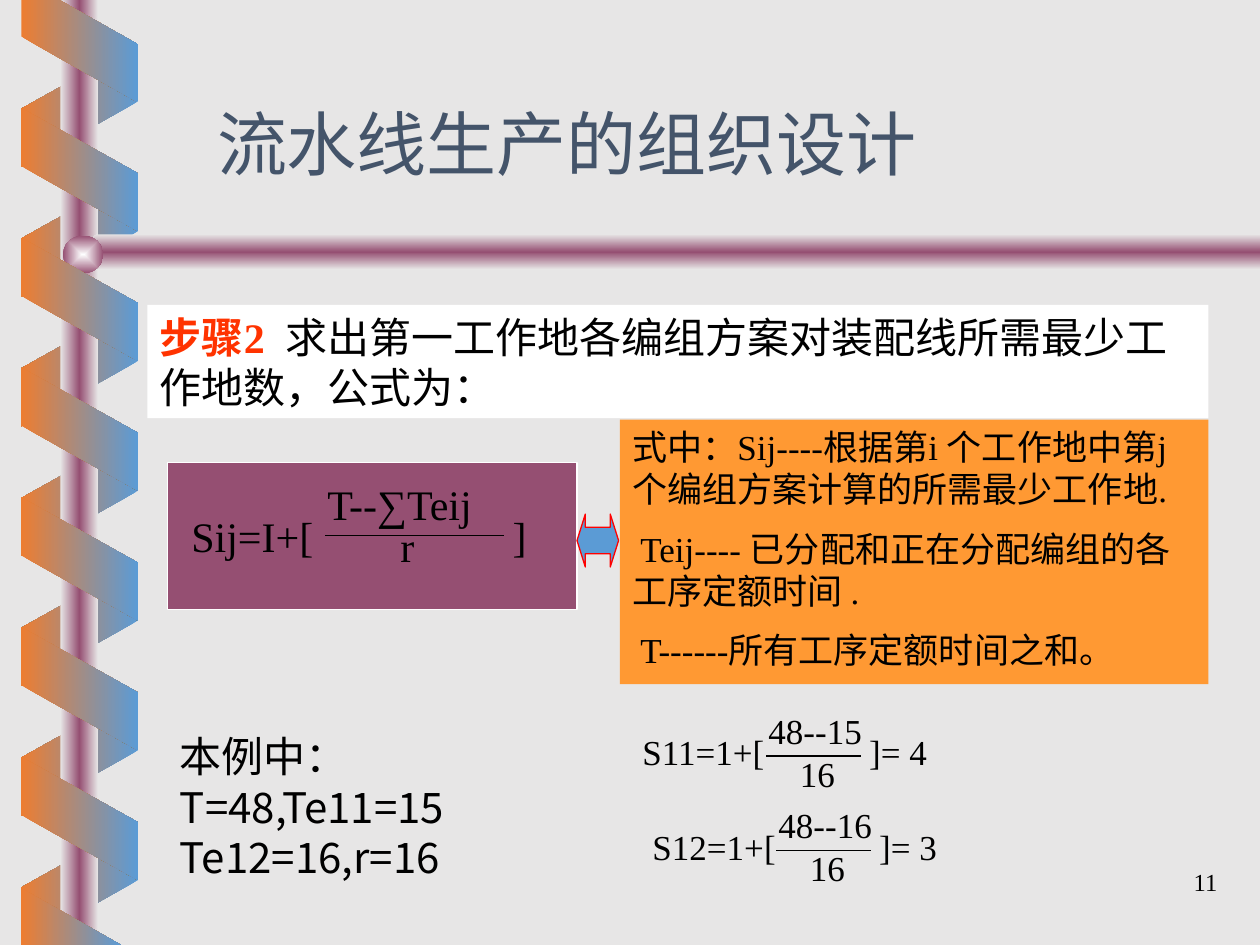
from lxml import etree
from pptx import Presentation
from pptx.dml.color import RGBColor
from pptx.enum.shapes import MSO_CONNECTOR, MSO_SHAPE
from pptx.enum.text import MSO_ANCHOR, PP_ALIGN
from pptx.oxml import parse_xml
from pptx.oxml.ns import nsdecls, qn
from pptx.util import Inches, Pt

RECT, OVAL = MSO_SHAPE.RECTANGLE, MSO_SHAPE.OVAL
STRIP, BAR = MSO_SHAPE.PARALLELOGRAM, MSO_SHAPE.PENTAGON
ARROW = MSO_SHAPE.LEFT_RIGHT_ARROW
STRAIGHT = MSO_CONNECTOR.STRAIGHT
TOP, BOTTOM = MSO_ANCHOR.TOP, MSO_ANCHOR.BOTTOM
LEFT, RIGHT = PP_ALIGN.LEFT, PP_ALIGN.RIGHT

SERIF, SANS = "Times New Roman", "Noto Sans CJK SC"
GRAY, PLUM, ORANGE, BLUE = "E7E6E6", "954F72", "ED7D31", "5B9BD5"
BLACK, WHITE, RED = "000000", "FFFFFF", "FF3300"
FADE = [(0, GRAY), (50, PLUM), (100, GRAY)]
RIBBON = [(0, ORANGE), (100, BLUE)]
STRIP_STEP = 1.03


def rgb(value):
    return RGBColor.from_string(value)


def fill_gradient(sp, stops, angle=None):
    """Fill with a linear gradient, or one from the centre if angle is None."""
    gs = "".join(f'<a:gs pos="{pos * 1000}"><a:srgbClr val="{color}"/></a:gs>'
                 for pos, color in stops)
    if angle is None:
        way = ('<a:path path="shape"><a:fillToRect l="50000" t="50000" '
               'r="50000" b="50000"/></a:path>')
    else:
        way = f'<a:lin ang="{angle * 60000}" scaled="0"/>'
    grad = parse_xml(f'<a:gradFill {nsdecls("a")} rotWithShape="0">'
                     f'<a:gsLst>{gs}</a:gsLst>{way}</a:gradFill>')
    geometry = sp._element.spPr.find(qn("a:prstGeom"))
    if geometry is None:
        geometry = sp._element.spPr.find(qn("a:custGeom"))
    geometry.addnext(grad)


def set_line(sp, color):
    if color:
        sp.line.color.rgb = rgb(color)
        sp.line.width = Pt(0.75)
    else:
        sp.line.fill.background()


def add_block(slide, kind, box, fill=None, line=None, adjust=(), flip=False):
    sp = slide.shapes.add_shape(kind, *map(Inches, box))
    sp.shadow.inherit = False
    for i, value in enumerate(adjust):
        sp.adjustments[i] = value
    if fill:
        sp.fill.solid()
        sp.fill.fore_color.rgb = rgb(fill)
    set_line(sp, line)
    if flip:
        sp._element.spPr.find(qn("a:xfrm")).set("flipH", "1")
    return sp


def add_strip(slide, top, rotation, stops, flip=False):
    sp = add_block(slide, STRIP, (0.14, top, 0.98, 0.93), adjust=[0.56], flip=flip)
    sp.rotation = rotation
    fill_gradient(sp, stops, 0)


def add_ribbon_end(slide, points):
    points = [(Inches(x), Inches(y)) for x, y in points]
    builder = slide.shapes.build_freeform(*points[0])
    builder.add_line_segments(points[1:], close=True)
    sp = builder.convert_to_shape()
    sp.shadow.inherit = False
    set_line(sp, None)
    fill_gradient(sp, RIBBON, 0)


def add_run(p, text, size, color=BLACK, font=SERIF, bold=False):
    r = p.add_run()
    r.text = text
    r.font.size = Pt(size)
    r.font.name = font
    r.font.bold = bold
    r.font.color.rgb = rgb(color)
    ea = etree.SubElement(r._r.get_or_add_rPr(), qn("a:ea"))
    ea.set("typeface", SANS)


def write(sp, paragraphs, size, align=LEFT, anchor=TOP, font=SERIF):
    """Fill a shape with paragraphs, each a list of (text, color, bold) runs."""
    tf = sp.text_frame
    tf.word_wrap = True
    tf.vertical_anchor = anchor
    for i, runs in enumerate(paragraphs):
        p = tf.add_paragraph() if i else tf.paragraphs[0]
        p.alignment = align
        if i:
            p.space_before = Pt(size / 2)
        for text, color, bold in runs:
            add_run(p, text, size, color, font, bold)


def add_text(slide, box, text, size, color=BLACK, **layout):
    sp = slide.shapes.add_textbox(*map(Inches, box))
    write(sp, [[(text, color, False)]], size, **layout)
    return sp


def add_rule(slide, x1, x2, y):
    line = slide.shapes.add_connector(
        STRAIGHT, Inches(x1), Inches(y), Inches(x2), Inches(y))
    set_line(line, BLACK)
    etree.SubElement(line._element.spPr, qn("a:effectLst"))


def add_gapped_text(slide, box, before, after, gap_end, size):
    """Write two parts of a formula, the second at a tab stop."""
    sp = add_text(slide, box, f"{before}\t{after}", size)
    pPr = sp.text_frame.paragraphs[0]._p.get_or_add_pPr()
    tab = etree.SubElement(etree.SubElement(pPr, qn("a:tabLst")), qn("a:tab"))
    tab.set("pos", str(Inches(gap_end)))
    tab.set("algn", "l")


def add_example(slide, x, y, name, numerator, result):
    add_rule(slide, x + 1.08, x + 1.83, y + 0.25)
    add_gapped_text(slide, (x, y, 3.17, 0.43), f"{name}=1+[", f"]= {result}", 1.8, 20)
    add_text(slide, (x + 1, y - 0.17, 1.58, 0.43), numerator, 20)
    add_text(slide, (x + 1.25, y + 0.17, 1, 0.43), "16", 20)


def add_decoration(slide):
    for i in range(7):
        add_strip(slide, 0.37 + i * STRIP_STEP, 90, [(0, BLUE), (100, ORANGE)], True)
    pole = add_block(slide, RECT, (0.48, 0, 0.3, 7.5))
    fill_gradient(pole, FADE, 0)
    bar = add_block(slide, BAR, (0.6, 1.86, 9.4, 0.28), adjust=[0.59], flip=True)
    fill_gradient(bar, FADE, 90)
    knob = add_block(slide, OVAL, (0.5, 1.87, 0.32, 0.3))
    fill_gradient(knob, [(0, "FEFFFF"), (100, PLUM)])
    for i in range(6):
        add_strip(slide, 0.88 + i * STRIP_STEP, 270, RIBBON)
    add_ribbon_end(slide, [(0.17, 0), (0.17, 0.29), (1.09, 0.81), (1.09, 0.35), (0.47, 0)])
    add_ribbon_end(slide, [(0.96, 7.5), (0.17, 7.05), (0.17, 7.5)])


def add_formula(slide):
    add_block(slide, RECT, (1.33, 3.67, 3.25, 1.17), PLUM, WHITE)
    add_gapped_text(slide, (1.42, 4, 3.5, 0.5), "Sij=I+[", "]", 2.55, 24)
    add_rule(slide, 2.58, 4, 4.25)
    add_text(slide, (2.5, 3.75, 2.33, 0.5), "T--∑Teij", 24)
    add_text(slide, (3.08, 4.08, 0.92, 0.5), "r", 24)


def main():
    prs = Presentation()
    prs.slide_width, prs.slide_height = Inches(10), Inches(7.5)
    slide = prs.slides.add_slide(prs.slide_layouts[6])
    slide.background.fill.solid()
    slide.background.fill.fore_color.rgb = rgb(GRAY)

    add_decoration(slide)
    add_text(slide, (1.5, 0.74, 7.92, 0.77), " 流水线生产的组织设计", 40, "44546A",
             anchor=BOTTOM, font=SANS)
    add_text(slide, (7.68, 6.83, 2.08, 0.5), "11", 14, align=RIGHT)

    step = add_block(slide, RECT, (1.17, 2.42, 8.42, 0.9), WHITE)
    write(step, [[("步骤2  ", RED, True),
                  ("求出第一工作地各编组方案对装配线所需最少工作地数，公式为：", BLACK, False)]], 24)

    add_formula(slide)
    legend = add_block(slide, RECT, (4.92, 3.33, 4.67, 2.1), "FF9933")
    terms = ["式中：Sij----根据第i 个工作地中第j 个编组方案计算的所需最少工作地.",
             " Teij---- 已分配和正在分配编组的各工序定额时间 .",
             " T------所有工序定额时间之和。"]
    write(legend, [[(term, BLACK, False)] for term in terms], 20)
    add_block(slide, ARROW, (4.58, 4.08, 0.33, 0.42), BLUE, "FF0000", [0.5, 0.2])

    add_text(slide, (1.33, 5.75, 2.83, 1.3), "本例中：T=48,Te11=15 Te12=16,r=16", 24, font=SANS)
    add_example(slide, 5, 5.75, "S11", "48--15", 4)
    add_example(slide, 5.08, 6.5, "S12", "48--16", 3)
    prs.save("out.pptx")


if __name__ == "__main__":
    main()
